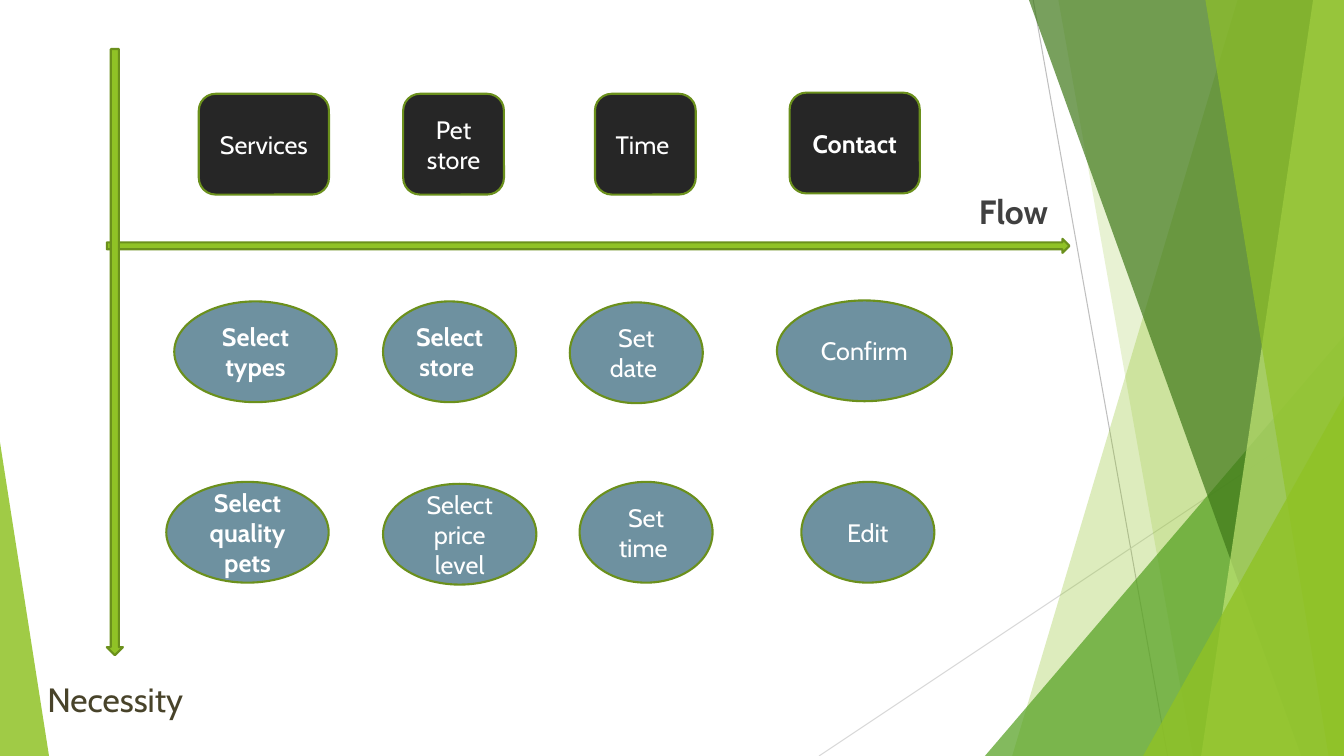
from dataclasses import dataclass

import lxml.etree
import pptx
import pptx.dml.color
import pptx.enum.shapes
import pptx.enum.text
import pptx.oxml.ns
import pptx.util

Pt = pptx.util.Pt
RGBColor = pptx.dml.color.RGBColor
ShapeKind = pptx.enum.shapes.MSO_SHAPE
Align = pptx.enum.text.PP_ALIGN
qn = pptx.oxml.ns.qn

WIDTH, HEIGHT = 960, 540
FONT = "Cabin"
LIME = RGBColor(0x90, 0xC2, 0x26)
PALE_LIME = RGBColor(0xC0, 0xE4, 0x74)
GREEN = RGBColor(0x54, 0xA0, 0x21)
FOREST = RGBColor(0x3F, 0x78, 0x19)
OUTLINE = RGBColor(0x6B, 0x90, 0x1C)
CHARCOAL = RGBColor(0x26, 0x26, 0x26)
SLATE = RGBColor(0x6E, 0x91, 0xA0)
WHITE = RGBColor(0xFF, 0xFF, 0xFF)
OLIVE = RGBColor(0x48, 0x43, 0x2A)
DARK_GREY = RGBColor(0x40, 0x40, 0x40)
GREY = RGBColor(0xBF, 0xBF, 0xBF)
LIGHT_GREY = RGBColor(0xD9, 0xD9, 0xD9)


@dataclass
class Band:
    """A full-height facet running from its left edge to the slide's right edge."""
    top_left: float
    bottom_left: float
    color: RGBColor
    opacity: int


@dataclass
class Triangle:
    left: float
    top: float
    width: float
    apex: float
    color: RGBColor
    opacity: int


@dataclass
class Ray:
    start: tuple[float, float]
    end: tuple[float, float]
    color: RGBColor


@dataclass
class Card:
    text: str
    left: float
    top: float
    width: float
    bold: bool = False


@dataclass
class Axis:
    kind: ShapeKind
    box: tuple[float, float, float, float]


RAYS = [
    Ray((738, 0), (834, HEIGHT), GREY),
    Ray((WIDTH, 290), (585, HEIGHT), LIGHT_GREY),
]
FACETS = [
    Band(884, 723, LIME, 30),
    Band(756, 852, LIME, 20),
    Triangle(703.5, 240, 256.5, 1, GREEN, 72),
    Band(735, 929.5, FOREST, 70),
    Band(938, 858, PALE_LIME, 70),
    Band(861, 949, LIME, 65),
    Triangle(816.5, 283, 143.5, 1, LIME, 80),
    Triangle(0, 316, 35, 0, LIME, 85),
]
CARD_HEIGHT = 72
ACTIVITIES = [
    Card("Services", 142, 67, 93),
    Card("Pet store", 288, 67, 72),
    Card("Time ", 425, 67, 72),
    Card("Contact", 564, 66.2, 93, bold=True),
]
TASKS = [
    Card("Select types", 124.5, 215.3, 116, bold=True),
    Card("Select store ", 273.6, 215.3, 95, bold=True),
    Card("Set date ", 407, 216, 95),
    Card("Confirm", 555, 214.6, 125),
    Card("Select quality pets", 118.8, 344.2, 116, bold=True),
    Card("Select price level", 273.6, 345.6, 109.5),
    Card("Set time ", 414, 344.2, 95),
    Card("Edit", 572.4, 344.2, 95),
]
AXES = [
    Axis(ShapeKind.RIGHT_ARROW, (76.3, 170.6, 687.6, 10)),
    Axis(ShapeKind.DOWN_ARROW, (76.3, 35, 11.5, 433)),
]


def set_attributes(target, values: dict) -> None:
    for name, value in values.items():
        setattr(target, name, value)


def fill_shape(shape, color: RGBColor, opacity: int = 100) -> None:
    shape.shadow.inherit = False
    shape.fill.solid()
    shape.fill.fore_color.rgb = color
    if opacity < 100:
        color_element = shape._element.spPr.find(qn("a:solidFill"))[0]
        lxml.etree.SubElement(color_element, qn("a:alpha"), val=str(opacity * 1000))


def outline_shape(shape) -> None:
    shape.line.color.rgb = OUTLINE
    shape.line.width = Pt(1.5)


def write_text(shape, text: str, size: float, color: RGBColor, bold: bool, alignment: Align):
    frame = shape.text_frame
    frame.text = text
    set_attributes(frame, {
        "word_wrap": True,
        "auto_size": pptx.enum.text.MSO_AUTO_SIZE.NONE,
        "vertical_anchor": pptx.enum.text.MSO_ANCHOR.MIDDLE,
    })
    paragraph = frame.paragraphs[0]
    paragraph.alignment = alignment
    font = paragraph.runs[0].font
    set_attributes(font, {"name": FONT, "size": Pt(size), "bold": bold})
    font.color.rgb = color
    return paragraph


def add_ray(slide, ray: Ray) -> None:
    line = slide.shapes.add_connector(
        pptx.enum.shapes.MSO_CONNECTOR.STRAIGHT, *map(Pt, ray.start + ray.end))
    line.line.color.rgb = ray.color
    line.line.width = Pt(0.75)
    lxml.etree.SubElement(line._element.spPr, qn("a:effectLst"))


def add_facet(slide, facet: Band | Triangle) -> None:
    if isinstance(facet, Band):
        builder = slide.shapes.build_freeform(Pt(facet.top_left), 0)
        corners = [(WIDTH, 0), (WIDTH, HEIGHT), (facet.bottom_left, HEIGHT)]
        builder.add_line_segments([(Pt(x), Pt(y)) for x, y in corners], close=True)
        shape = builder.convert_to_shape()
    else:
        box = (facet.left, facet.top, facet.width, HEIGHT - facet.top)
        shape = slide.shapes.add_shape(ShapeKind.ISOSCELES_TRIANGLE, *map(Pt, box))
        shape.adjustments[0] = facet.apex
    fill_shape(shape, facet.color, facet.opacity)
    shape.line.fill.background()


def add_card(slide, card: Card, kind: ShapeKind, color: RGBColor) -> None:
    box = (card.left, card.top, card.width, CARD_HEIGHT)
    shape = slide.shapes.add_shape(kind, *map(Pt, box))
    fill_shape(shape, color)
    outline_shape(shape)
    write_text(shape, card.text, 18, WHITE, card.bold, Align.CENTER)


def add_axis(slide, axis: Axis) -> None:
    shape = slide.shapes.add_shape(axis.kind, *map(Pt, axis.box))
    fill_shape(shape, LIME)
    outline_shape(shape)


def place_label(slide, placeholder, text: str, box: tuple, color: RGBColor, bold: bool):
    """Format a placeholder as an axis label and bring it above the facets."""
    set_attributes(placeholder, dict(zip(("left", "top", "width", "height"), map(Pt, box))))
    slide.shapes._spTree.append(placeholder._element)
    return write_text(placeholder, text, 24, color, bold, Align.LEFT)


def main() -> None:
    presentation = pptx.Presentation()
    set_attributes(presentation, {"slide_width": Pt(WIDTH), "slide_height": Pt(HEIGHT)})
    slide = presentation.slides.add_slide(presentation.slide_layouts[1])
    title, body = slide.placeholders
    for ray in RAYS:
        add_ray(slide, ray)
    for facet in FACETS:
        add_facet(slide, facet)
    place_label(slide, title, "Necessity", (26.6, 478, 121.7, 42.5), OLIVE, False)
    flow = place_label(slide, body, "Flow", (692, 136, 72, 30.2), DARK_GREY, True)
    flow.space_before = Pt(10)
    properties = flow._p.get_or_add_pPr()
    properties.set("marL", "0")
    properties.set("indent", "0")
    lxml.etree.SubElement(properties, qn("a:buNone"))
    for activity in ACTIVITIES:
        add_card(slide, activity, ShapeKind.ROUNDED_RECTANGLE, CHARCOAL)
    for task in TASKS:
        add_card(slide, task, ShapeKind.OVAL, SLATE)
    for axis in AXES:
        add_axis(slide, axis)
    presentation.save("out.pptx")


if __name__ == "__main__":
    main()
